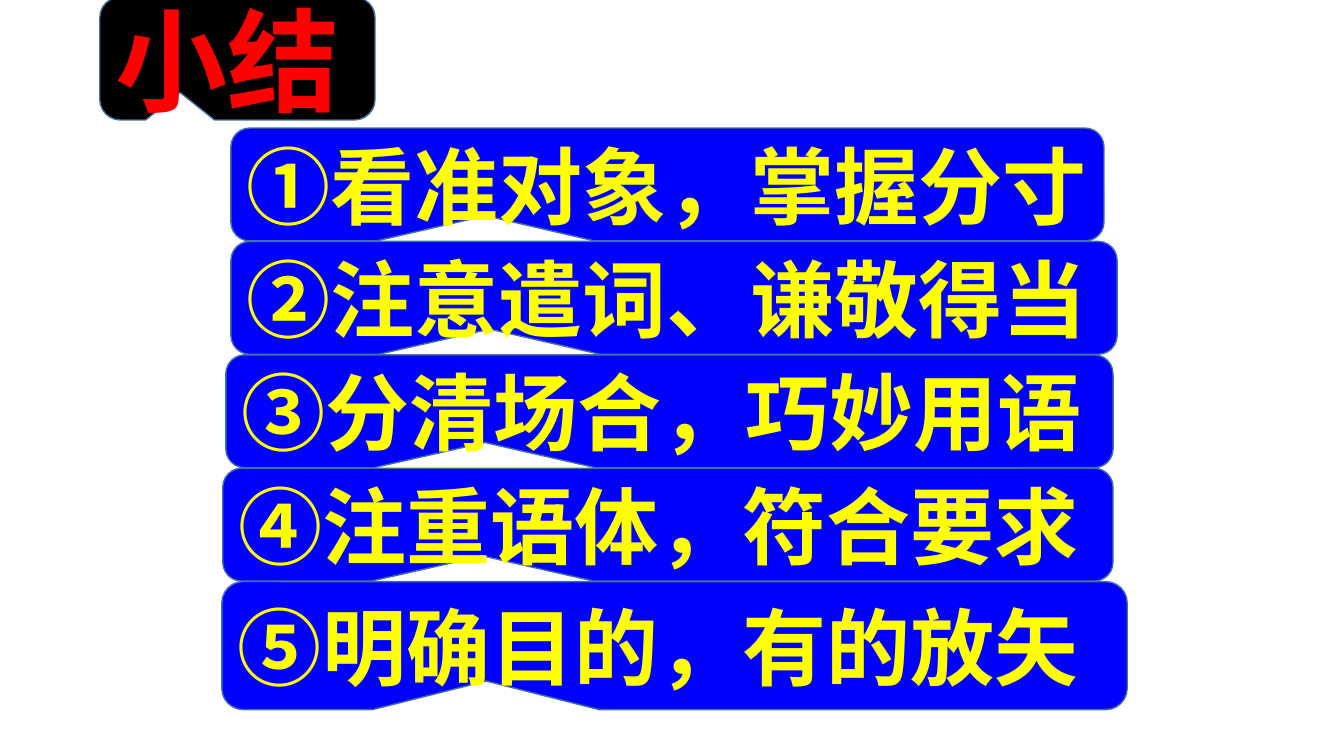
"""Build the summary slide: a heading and five callout bars."""
from lxml import etree
from pptx import Presentation
from pptx.dml.color import RGBColor
from pptx.enum import shapes, text
from pptx.oxml import ns
from pptx.util import Inches, Pt

HEAD = "小结"
HEAD_BOX = (0.99, -0.03, 2.73, 1.22)
BARS = [
    ("①看准对象，掌握分寸", 2.29, 8.66, 1.12),
    ("②注意遣词、谦敬得当", 2.29, 8.79, 1.12),
    ("③分清场合，巧妙用语", 2.24, 8.8, 1.12),
    ("④注重语体，符合要求", 2.21, 8.83, 1.12),
    ("⑤明确目的，有的放矢", 2.2, 8.98, 1.27),
]
TOP = 1.27
STEP = 1.125
NOTCH = (-0.208, 0.277, 0.167)
FONT = "Noto Sans CJK SC"
HEX = {"bar": "0000FF", "head": "000000", "edge": "41719C",
       "item": "FFFF00", "title": "FF0000"}


def color(name):
    """Return the named colour."""
    return RGBColor.from_string(HEX[name])


def callout(slide, box, fill):
    """Add a rounded callout whose tip notches its lower edge."""
    shape = slide.shapes.add_shape(
        shapes.MSO_SHAPE.ROUNDED_RECTANGULAR_CALLOUT, *map(Inches, box))
    for i, val in enumerate(NOTCH):
        shape.adjustments[i] = val
    shape.shadow.inherit = False
    shape.fill.solid()
    shape.fill.fore_color.rgb = color(fill)
    shape.line.color.rgb = color(HEX and "edge")
    shape.line.width = Pt(1)
    return shape


def write(shape, words, size, ink):
    """Write one bold line, left aligned and centred in height."""
    frame = shape.text_frame
    frame.word_wrap = True
    frame.auto_size = text.MSO_AUTO_SIZE.NONE
    frame.vertical_anchor = text.MSO_ANCHOR.MIDDLE
    para = frame.paragraphs[0]
    para.alignment = text.PP_ALIGN.LEFT
    para.line_spacing = 1.0
    run = para.add_run()
    run.text = words
    font = run.font
    font.name, font.size, font.bold = FONT, Pt(size), True
    font.color.rgb = color(ink)
    east = etree.SubElement(run._r.get_or_add_rPr(), ns.qn("a:ea"))
    east.set("typeface", FONT)


def main():
    """Lay out the slide and save it."""
    deck = Presentation()
    deck.slide_width, deck.slide_height = Inches(13.33), Inches(7.5)
    slide = deck.slides.add_slide(deck.slide_layouts[5])

    for i, (words, left, width, height) in enumerate(BARS):
        bar = callout(slide, (left, TOP + i * STEP, width, height), "bar")
        write(bar, words, 60, "item")

    panel = callout(slide, HEAD_BOX, "head")
    title = slide.shapes.title
    title.left, title.top, title.width, title.height = map(Inches, HEAD_BOX)
    write(title, HEAD, 80, "title")
    title.text_frame.margin_left = Inches(0.16)
    panel._element.addnext(title._element)

    deck.save("out.pptx")


if __name__ == "__main__":
    main()
